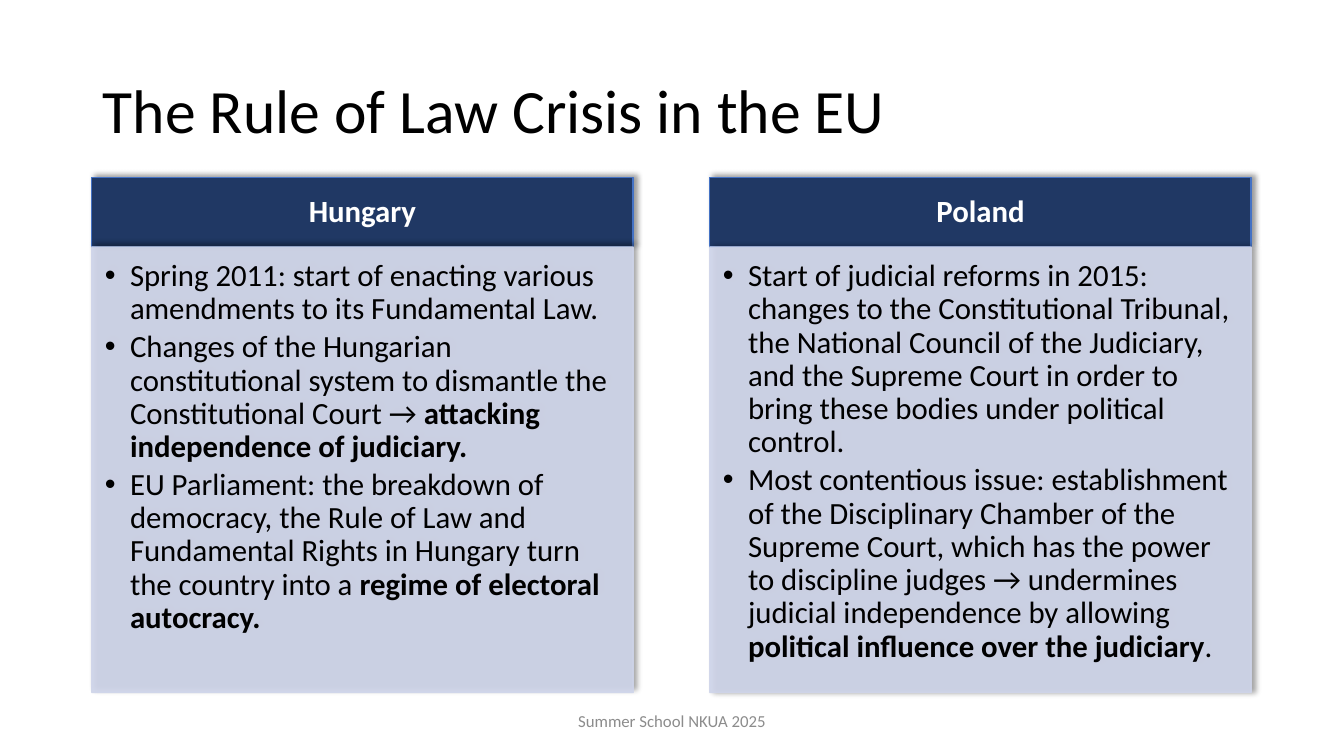
from lxml import etree
from pptx import Presentation
from pptx import util as u
from pptx.dml.color import RGBColor
from pptx.enum import shapes, text
from pptx.oxml.ns import qn

NAVY = RGBColor(0x20, 0x38, 0x64)
BLUE = RGBColor(0x44, 0x72, 0xC4)
PALE = RGBColor(0xCF, 0xD5, 0xEA)
GREY = RGBColor(0x8C, 0x8C, 0x8C)
BLACK = RGBColor(0, 0, 0)
WHITE = RGBColor(255, 255, 255)

# Grid: two equal columns, a header row above a body row
WIDE, HIGH = 13.33, 7.5
LEFT, STEP, COL = 0.91, 6.13, 5.37
TOP, HEAD, BODY = 1.76, 0.69, 4.42

# Each bullet is a list of (words, bold) runs
CARDS = [
    ("Hungary", [
        [("Spring 2011: start of enacting various amendments to its "
          "Fundamental Law.", False)],
        [("Changes of the Hungarian constitutional system to dismantle "
          "the Constitutional Court → ", False),
         ("attacking independence of judiciary.", True)],
        [("EU Parliament: the breakdown of democracy, the Rule of Law and "
          "Fundamental Rights in Hungary turn the country into a ", False),
         ("regime of electoral autocracy.", True)],
    ]),
    ("Poland", [
        [("Start of judicial reforms in 2015: changes to the Constitutional "
          "Tribunal, the National Council of the Judiciary, and the Supreme "
          "Court in order to bring these bodies under political control.",
          False)],
        [("Most contentious issue: establishment of the Disciplinary Chamber "
          "of the Supreme Court, which has the power to discipline judges → "
          "undermines judicial independence by allowing ", False),
         ("political influence over the judiciary", True),
         (".", False)],
    ]),
]


def apply(item, **form):
    for key, val in form.items():
        setattr(item, key, val)


def node(up, tag, **form):
    return etree.SubElement(up, qn(tag), {k: str(v) for k, v in form.items()})


def write(para, runs, size, color, **form):
    """Fill a paragraph with (words, bold) runs."""
    apply(para, **form)
    for words, bold in runs:
        run = para.add_run()
        run.text = words
        apply(run.font, name="Calibri", size=u.Pt(size), bold=bold)
        run.font.color.rgb = color


def inset(frame, left, top, right, bottom, anchor):
    apply(frame, word_wrap=True, vertical_anchor=anchor,
          margin_left=u.Inches(left), margin_top=u.Inches(top),
          margin_right=u.Inches(right), margin_bottom=u.Inches(bottom))


def shade(box, angle):
    """Give a shape a soft black shadow."""
    box.shadow.inherit = False
    effect = box._element.spPr.find(qn("a:effectLst"))
    cast = node(effect, "a:outerShdw", blurRad=u.Pt(4), dist=u.Pt(3),
                dir=angle * 60000, algn="bl", rotWithShape=0)
    node(node(cast, "a:srgbClr", val="000000"), "a:alpha", val=40000)


def panel(slide, left, top, high, fill, edge, alpha=100, angle=315):
    box = slide.shapes.add_shape(
        shapes.MSO_SHAPE.RECTANGLE,
        *(u.Inches(n) for n in (left, top, COL, high)))
    box.fill.solid()
    box.fill.fore_color.rgb = fill
    box.line.color.rgb = edge
    box.line.width = u.Pt(1)
    if alpha < 100:
        for color in box._element.spPr.iter(qn("a:srgbClr")):
            node(color, "a:alpha", val=alpha * 1000)
    shade(box, angle)
    return box.text_frame


def bullet(para):
    props = para._p.get_or_add_pPr()
    props.set("marL", str(u.Inches(0.25)))
    props.set("indent", str(u.Inches(-0.25)))
    node(props, "a:buFont", typeface="Arial")
    node(props, "a:buChar", char="•")


def card(slide, left, name, points, angle):
    # Header
    frame = panel(slide, left, TOP, HEAD, NAVY, BLUE)
    inset(frame, 0.17, 0.1, 0.17, 0.1, text.MSO_ANCHOR.MIDDLE)
    write(frame.paragraphs[0], [(name, True)], 22, WHITE,
          alignment=text.PP_ALIGN.CENTER, line_spacing=0.9)

    # Bullets
    frame = panel(slide, left, TOP + HEAD, BODY, PALE, PALE, 90, angle)
    inset(frame, 0.13, 0.13, 0.17, 0.19, text.MSO_ANCHOR.TOP)
    for i, runs in enumerate(points):
        para = frame.add_paragraph() if i else frame.paragraphs[0]
        write(para, runs, 22, BLACK, alignment=text.PP_ALIGN.LEFT,
              line_spacing=0.9, space_before=u.Pt(0), space_after=u.Pt(3.3))
        bullet(para)


def title(slide, words):
    head = slide.shapes.title
    apply(head, left=u.Inches(0.92), top=u.Inches(0.4),
          width=u.Inches(11.5), height=u.Inches(1.45))
    inset(head.text_frame, 0.1, 0.05, 0.1, 0.05, text.MSO_ANCHOR.MIDDLE)
    write(head.text_frame.paragraphs[0], [(words, False)], 44, BLACK,
          alignment=text.PP_ALIGN.LEFT, line_spacing=0.9)


def footer(slide, words):
    wide = 4.5
    box = slide.shapes.add_textbox(u.Inches((WIDE - wide) / 2),
                                   u.Inches(6.95), u.Inches(wide),
                                   u.Inches(0.4))
    inset(box.text_frame, 0.1, 0.05, 0.1, 0.05, text.MSO_ANCHOR.MIDDLE)
    write(box.text_frame.paragraphs[0], [(words, False)], 12, GREY,
          alignment=text.PP_ALIGN.CENTER)


def main():
    deck = Presentation()
    apply(deck, slide_width=u.Inches(WIDE), slide_height=u.Inches(HIGH))
    slide = deck.slides.add_slide(deck.slide_layouts[5])
    title(slide, "The Rule of Law Crisis in the EU")
    for i, ((name, points), angle) in enumerate(zip(CARDS, (315, 0))):
        card(slide, LEFT + i * STEP, name, points, angle)
    footer(slide, "Summer School NKUA 2025")
    deck.save("out.pptx")


if __name__ == "__main__":
    main()
